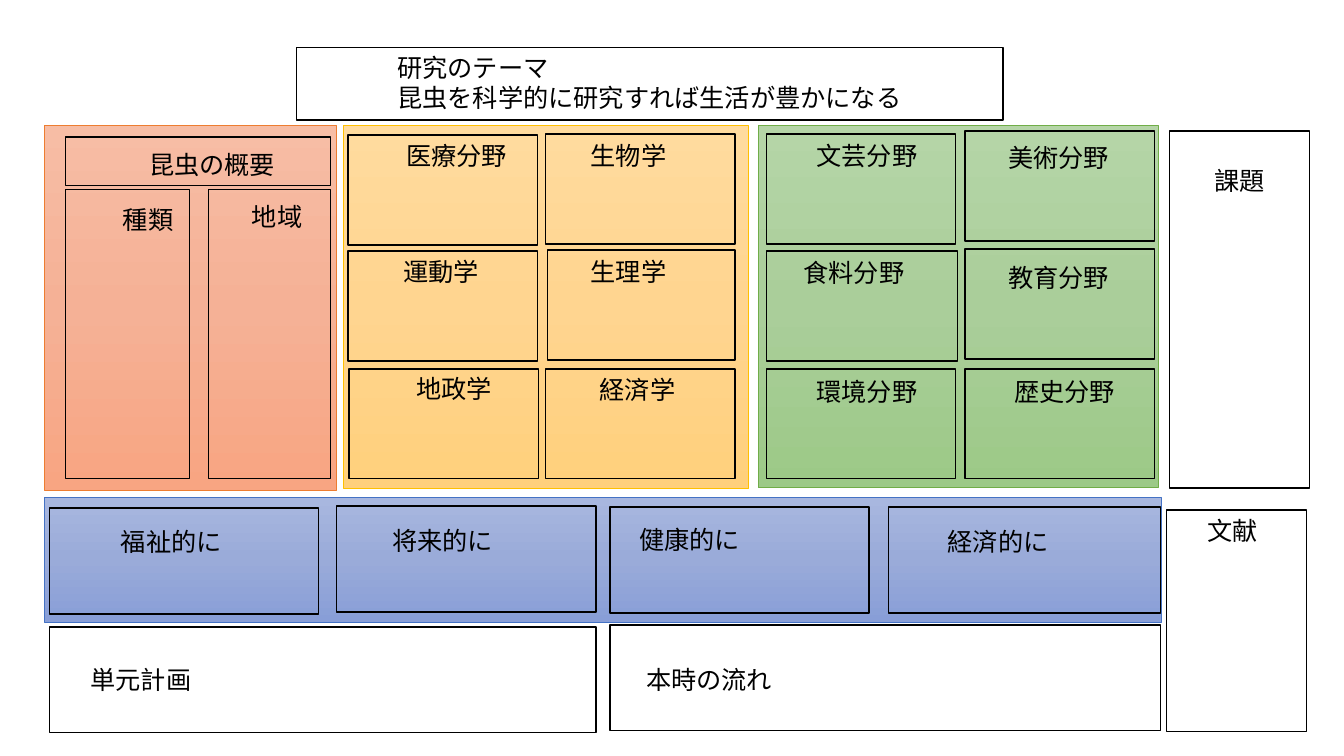
"""Build the research map slide on insects and everyday life."""
from copy import deepcopy
from dataclasses import dataclass

from lxml.etree import SubElement
from pptx import Presentation
from pptx.dml.color import RGBColor
from pptx.enum.shapes import MSO_SHAPE
from pptx.enum.text import MSO_ANCHOR, MSO_AUTO_SIZE, PP_ALIGN
from pptx.oxml.ns import qn
from pptx.util import Pt

PX = 9144
FONT = "Noto Sans CJK JP"
BLACK = "000000"
LABEL_HEIGHT = 40


@dataclass(frozen=True)
class Box:
    left: int
    top: int
    width: int
    height: int

    def emu(self) -> tuple[int, int, int, int]:
        return self.left * PX, self.top * PX, self.width * PX, self.height * PX


@dataclass(frozen=True)
class Panel:
    box: Box
    line: str
    shades: tuple[str, str, str]


@dataclass(frozen=True)
class Card:
    label: str
    box: Box
    label_left: int
    label_top: int
    label_width: int = 0


PANELS = [
    Panel(Box(44, 493, 1108, 124), "4472C4", ("A8B7DF", "9AABD9", "889ED7")),
    Panel(Box(752, 124, 397, 360), "70AD47", ("B5D5A7", "AACE9A", "9CC987")),
    Panel(Box(341, 124, 401, 361), "FFC000", ("FFDB9E", "FFD590", "FFD07C")),
    Panel(Box(44, 124, 290, 362), "ED7D31", ("F7BDA5", "F5B196", "F8A582")),
]

CARDS = [
    Card("昆虫の概要", Box(65, 136, 263, 48), 138, 143),
    Card("種類", Box(65, 188, 123, 287), 112, 198),
    Card("地域", Box(207, 188, 121, 287), 240, 195),
    Card("医療分野", Box(345, 134, 188, 109), 393, 134),
    Card("生物学", Box(541, 133, 188, 109), 576, 134, 121),
    Card("運動学", Box(345, 249, 188, 109), 390, 249),
    Card("生理学", Box(543, 248, 186, 109), 576, 249),
    Card("地政学", Box(346, 366, 188, 109), 403, 365),
    Card("経済学", Box(541, 366, 188, 109), 585, 366),
    Card("文芸分野", Box(760, 133, 188, 109), 800, 134),
    Card("美術分野", Box(957, 130, 188, 109), 990, 136),
    Card("食料分野", Box(760, 249, 190, 109), 787, 250),
    Card("教育分野", Box(957, 247, 188, 109), 990, 255),
    Card("環境分野", Box(760, 366, 188, 109), 800, 368),
    Card("歴史分野", Box(957, 366, 188, 109), 996, 368),
    Card("福祉的に", Box(49, 504, 267, 105), 110, 517),
    Card("将来的に", Box(334, 502, 257, 105), 379, 516),
    Card("健康的に", Box(605, 503, 257, 105), 624, 515, 121),
    Card("経済的に", Box(881, 503, 270, 105), 930, 517),
    Card("単元計画", Box(49, 622, 542, 105), 80, 654),
    Card("本時の流れ", Box(605, 620, 546, 105), 631, 654),
    Card("課題", Box(1160, 130, 139, 354), 1195, 159),
    Card("文献", Box(1157, 506, 139, 220), 1188, 506),
]


def color(value: str) -> RGBColor:
    return RGBColor.from_string(value)


def style_paragraph(paragraph) -> None:
    paragraph.alignment = PP_ALIGN.LEFT
    paragraph.font.size = Pt(18)
    paragraph.font.color.rgb = color(BLACK)
    paragraph.font.name = FONT
    defaults = paragraph._p.pPr.find(qn("a:defRPr"))
    SubElement(defaults, qn("a:ea")).set("typeface", FONT)


def add_rectangle(page, box: Box, line: str, points: float):
    shape = page.shapes.add_shape(MSO_SHAPE.RECTANGLE, *box.emu())
    shape.shadow.inherit = False
    shape.fill.background()
    shape.line.color.rgb = color(line)
    shape.line.width = Pt(points)
    return shape


def add_panel(page, panel: Panel) -> None:
    shape = add_rectangle(page, panel.box, panel.line, 0.5)
    shape.fill.gradient()
    shape.fill.gradient_angle = 270
    stop_list = next(shape._element.spPr.iter(qn("a:gsLst")))
    stop_list.insert(1, deepcopy(stop_list[0]))
    for index, (stop, shade) in enumerate(zip(shape.fill.gradient_stops, panel.shades)):
        stop.color.rgb = color(shade)
        stop.position = index / 2


def add_card(page, card: Card) -> None:
    add_rectangle(page, card.box, BLACK, 1)
    width = card.label_width or 25 * len(card.label) + 21
    place = Box(card.label_left, card.label_top, width, LABEL_HEIGHT)
    frame = page.shapes.add_textbox(*place.emu()).text_frame
    frame.word_wrap = card.label_width > 0
    frame.auto_size = MSO_AUTO_SIZE.SHAPE_TO_FIT_TEXT
    frame.text = card.label
    style_paragraph(frame.paragraphs[0])


def add_theme(page) -> None:
    title = page.shapes.title
    title.left, title.top, title.width, title.height = Box(384, 47, 667, 71).emu()
    frame = title.text_frame
    frame.word_wrap = True
    frame.auto_size = MSO_AUTO_SIZE.SHAPE_TO_FIT_TEXT
    frame.vertical_anchor = MSO_ANCHOR.TOP
    paragraph = frame.paragraphs[0]
    paragraph.line_spacing = 1.0
    paragraph.add_run().text = "研究のテーマ"
    paragraph.add_line_break()
    paragraph.add_run().text = "昆虫を科学的に研究すれば生活が豊かになる"
    style_paragraph(paragraph)
    add_rectangle(page, Box(294, 47, 701, 72), BLACK, 1)


def main() -> None:
    deck = Presentation()
    deck.slide_width, deck.slide_height = 1333 * PX, 750 * PX
    page = deck.slides.add_slide(deck.slide_layouts[5])
    add_theme(page)
    for panel in PANELS:
        add_panel(page, panel)
    for card in CARDS:
        add_card(page, card)
    deck.save("out.pptx")


if __name__ == "__main__":
    main()
